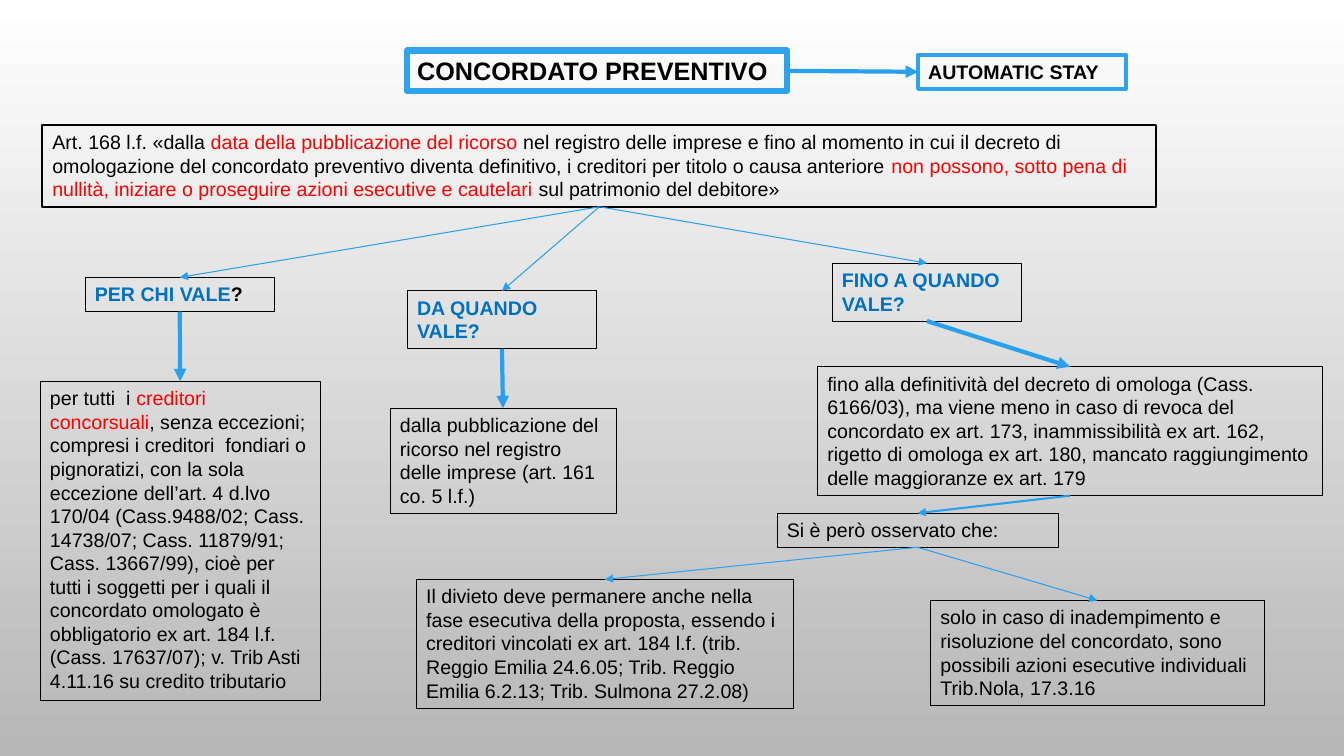
from typing import NamedTuple

from pptx import Presentation
from pptx import util as u
from pptx.dml.color import RGBColor
from pptx.enum import shapes, text
from pptx.oxml import parse_xml
from pptx.oxml.ns import nsdecls

BLACK, RED, NAVY = "000000", "FF0000", "0070C0"
SKY, EDGE = "29A0ED", "2FA3EE"
FIXED, GROW = text.MSO_AUTO_SIZE.NONE, text.MSO_AUTO_SIZE.SHAPE_TO_FIT_TEXT


class Box(NamedTuple):
    name: str
    at: tuple[float, float, float, float]
    runs: list[tuple[str, str]]
    size: int = 14
    bold: bool = False
    edge: str = BLACK
    width: float = 0.25
    fit: text.MSO_AUTO_SIZE = GROW


class Arrow(NamedTuple):
    start: str
    end: str
    width: float = 0.75
    sides: tuple[int, int] = (2, 0)
    color: str = SKY


TITLE = Box("title", (10.26, 1.27, 9.57, 1.03), [("CONCORDATO PREVENTIVO", BLACK)],
            18, True, EDGE, 4.5, FIXED)

BOXES = [
    Box("law", (1.07, 3.15, 28.07, 2.06), [
        ("Art. 168 l.f. «dalla ", BLACK),
        ("data della pubblicazione del ricorso ", RED),
        ("nel registro delle imprese e fino al momento in cui il decreto di omologazione "
         "del concordato preventivo diventa definitivo, i creditori per titolo o causa "
         "anteriore ", BLACK),
        ("non possono, sotto pena di nullità, iniziare o proseguire azioni esecutive "
         "e cautelari ", RED),
        ("sul patrimonio del debitore»", BLACK)], width=1.5),
    Box("stay", (23.14, 1.38, 5.23, 0.86), [("AUTOMATIC STAY", BLACK)],
        bold=True, edge=EDGE, width=3),
    # The three questions
    Box("who", (2.14, 6.99, 4.78, 0.86), [("PER CHI VALE", NAVY), ("?", BLACK)],
        bold=True, width=0.5),
    Box("when", (10.26, 7.33, 4.78, 1.46), [("DA QUANDO VALE?", NAVY)],
        bold=True, width=0.5),
    Box("until", (20.97, 6.63, 4.78, 1.46), [("FINO A QUANDO VALE?", NAVY)],
        bold=True, width=0.5),
    # Their answers
    Box("all", (1.01, 9.61, 7.06, 8.03), [
        ("per tutti  i ", BLACK),
        ("creditori concorsuali", RED),
        (", senza eccezioni; compresi i creditori  fondiari o pignoratizi, con la sola "
         "eccezione dell’art. 4 d.lvo 170/04 (Cass.9488/02; Cass. 14738/07; "
         "Cass. 11879/91; Cass. 13667/99), cioè per tutti i soggetti per i quali il "
         "concordato omologato è obbligatorio ex art. 184 l.f. (Cass. 17637/07); "
         "v. Trib Asti 4.11.16 su credito tributario", BLACK)], width=0.5),
    Box("since", (9.83, 10.29, 5.69, 2.64), [
        ("dalla pubblicazione del ricorso nel registro delle imprese "
         "(art. 161 co. 5 l.f.)", BLACK)]),
    Box("final", (20.6, 9.24, 12.73, 3.25), [
        ("fino alla definitività del decreto di omologa (Cass. 6166/03), ma viene meno "
         "in caso di revoca del concordato ex art. 173, inammissibilità ex art. 162, "
         "rigetto di omologa ex art. 180, mancato raggiungimento delle maggioranze "
         "ex art. 179", BLACK)]),
    # Remarks
    Box("note", (19.58, 12.93, 7.09, 0.86), [("Si è però osservato che:", BLACK)]),
    Box("ban", (10.49, 14.6, 9.5, 3.25), [
        ("Il divieto deve permanere anche nella fase esecutiva della proposta, essendo "
         "i creditori vincolati ex art. 184 l.f. (trib. Reggio Emilia 24.6.05; "
         "Trib. Reggio Emilia 6.2.13; Trib. Sulmona 27.2.08)", BLACK)]),
    Box("breach", (23.45, 15.13, 8.41, 2.64), [
        ("solo in caso di inadempimento e risoluzione del concordato, sono possibili "
         "azioni esecutive individuali Trib.Nola, 17.3.16", BLACK)]),
]

ARROWS = [
    Arrow("title", "stay", 3, (3, 1)),
    Arrow("law", "who"),
    Arrow("law", "when"),
    Arrow("law", "until"),
    Arrow("who", "all", 3),
    Arrow("when", "since", 3),
    Arrow("until", "final", 3),
    Arrow("final", "note", 1.5),
    Arrow("note", "ban", color=EDGE),
    Arrow("note", "breach"),
]


def paint(color: str) -> RGBColor:
    return RGBColor.from_string(color)


def write(frame, runs, *, size: int, bold: bool, fit: text.MSO_AUTO_SIZE) -> None:
    frame.word_wrap = True
    frame.auto_size = fit
    frame.vertical_anchor = text.MSO_ANCHOR.TOP
    para = frame.paragraphs[0]
    para.alignment = text.PP_ALIGN.LEFT
    for words, color in runs:
        run = para.add_run()
        run.text = words
        run.font.name = "Arial"
        run.font.size = u.Pt(size)
        run.font.bold = bold
        run.font.color.rgb = paint(color)


def dress(shape, box: Box) -> None:
    shape.left, shape.top, shape.width, shape.height = map(u.Cm, box.at)
    shape.line.color.rgb = paint(box.edge)
    shape.line.width = u.Pt(box.width)
    write(shape.text_frame, box.runs, size=box.size, bold=box.bold, fit=box.fit)


def link(slide, arrow: Arrow, made: dict) -> None:
    line = slide.shapes.add_connector(shapes.MSO_CONNECTOR.STRAIGHT, 0, 0, 0, 0)
    line.begin_connect(made[arrow.start], arrow.sides[0])
    line.end_connect(made[arrow.end], arrow.sides[1])
    line.line.color.rgb = paint(arrow.color)
    line.line.width = u.Pt(arrow.width)
    line.get_or_add_ln().append(
        parse_xml(f'<a:tailEnd {nsdecls("a")} type="triangle"/>'))
    line.element.spPr.append(parse_xml(f'<a:effectLst {nsdecls("a")}/>'))


def main() -> None:
    deck = Presentation()
    deck.slide_width, deck.slide_height = u.Cm(33.87), u.Cm(19.05)
    slide = deck.slides.add_slide(deck.slide_layouts[5])

    # Background, white at the top
    fill = slide.background.fill
    fill.gradient()
    fill.gradient_angle = 270
    for stop, color in zip(fill.gradient_stops, ("FFFFFF", "B7B7B7")):
        stop.color.rgb = paint(color)

    # Title and boxes
    made = {TITLE.name: slide.shapes.title}
    dress(slide.shapes.title, TITLE)
    for box in BOXES:
        made[box.name] = slide.shapes.add_textbox(*map(u.Cm, box.at))
        dress(made[box.name], box)

    # Arrows
    for arrow in ARROWS:
        link(slide, arrow, made)

    deck.save("out.pptx")


if __name__ == "__main__":
    main()
